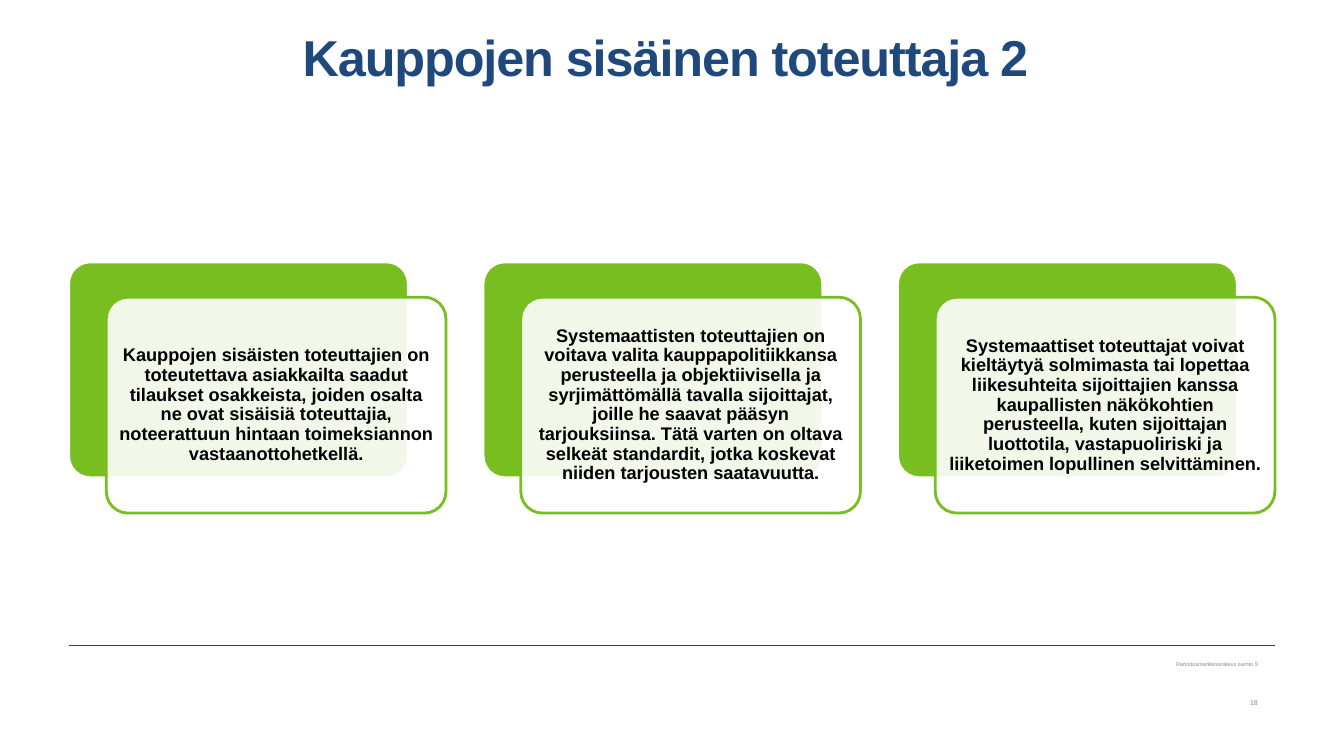
import pptx
import pptx.dml.color
import pptx.enum.shapes
import pptx.enum.text
import pptx.oxml.ns
import pptx.util
from lxml import etree
from pptx.util import Cm

COLORS = {"navy": "1F497D", "green": "78BE20", "white": "FFFFFF",
          "black": "000000", "grey": "8C8C8C"}
ALIGN = pptx.enum.text.PP_ALIGN
ANCHOR = pptx.enum.text.MSO_ANCHOR
LEFT, WIDTH = Cm(1.73), Cm(30.4)

CARDS = [
    "Kauppojen sisäisten toteuttajien on toteutettava asiakkailta saadut tilaukset "
    "osakkeista, joiden osalta ne ovat sisäisiä toteuttajia, noteerattuun hintaan "
    "toimeksiannon vastaanottohetkellä.",
    "Systemaattisten toteuttajien on voitava valita kauppapolitiikkansa perusteella ja "
    "objektiivisella ja syrjimättömällä tavalla sijoittajat, joille he saavat pääsyn "
    "tarjouksiinsa. Tätä varten on oltava selkeät standardit, jotka koskevat niiden "
    "tarjousten saatavuutta.",
    "Systemaattiset toteuttajat voivat kieltäytyä solmimasta tai lopettaa liikesuhteita "
    "sijoittajien kanssa kaupallisten näkökohtien perusteella, kuten sijoittajan "
    "luottotila, vastapuoliriski ja liiketoimen lopullinen selvittäminen.",
]


def rgb(name):
    return pptx.dml.color.RGBColor.from_string(COLORS[name])


def write(sp, text, size, color, bold=False, align=ALIGN.CENTER, anchor=ANCHOR.MIDDLE,
          line_spacing=0.9, spacing=0, insets=(0, 0, 0, 0)):
    """Fill a shape with one paragraph; insets are left, top, right, bottom in cm."""
    tf = sp.text_frame
    tf.word_wrap = True
    tf.vertical_anchor = anchor
    tf.margin_left, tf.margin_top, tf.margin_right, tf.margin_bottom = map(Cm, insets)
    p = tf.paragraphs[0]
    p.alignment = align
    p.line_spacing = line_spacing
    r = p.add_run()
    r.text = text
    r.font.name = "Arial"
    r.font.size = pptx.util.Pt(size)
    r.font.bold = bold
    r.font.color.rgb = rgb(color)
    if spacing:
        r._r.get_or_add_rPr().set("spc", str(round(spacing * 100)))


def add_panel(s, x, y, w, h, fill, line, opacity=100):
    sp = s.shapes.add_shape(pptx.enum.shapes.MSO_SHAPE.ROUNDED_RECTANGLE, x, y, w, h)
    sp.shadow.inherit = False
    sp.adjustments[0] = 0.1
    sp.fill.solid()
    sp.fill.fore_color.rgb = rgb(fill)
    if opacity < 100:
        color = sp.fill._xPr.find(".//" + pptx.oxml.ns.qn("a:srgbClr"))
        etree.SubElement(color, pptx.oxml.ns.qn("a:alpha"), val=str(opacity * 1000))
    sp.line.color.rgb = rgb(line)
    sp.line.width = pptx.util.Pt(2)
    return sp


def add_title(s, x, y, w, h):
    write(s.shapes.add_textbox(x, y, w, h), "Kauppojen sisäinen toteuttaja 2 ", 36, "navy",
          bold=True, anchor=ANCHOR.TOP, line_spacing=0.85, spacing=-0.8)


def add_cards(s, x, y, w, h):
    """Spread the cards over the box, each a green panel with a text panel shifted over it."""
    dx, dy, panel_w = Cm(0.95), Cm(0.89), Cm(8.56)
    panel_h = h - dy
    pitch = (w - dx - panel_w) // (len(CARDS) - 1)
    for i, text in enumerate(CARDS):
        left = x + i * pitch
        add_panel(s, left, y, panel_w, panel_h, "green", "white")
        front = add_panel(s, left + dx, y + dy, panel_w, panel_h, "white", "green", opacity=90)
        write(front, text, 13, "black", bold=True, insets=(0.13,) * 4)


def add_footer(s, x, y, w):
    rule = s.shapes.add_connector(pptx.enum.shapes.MSO_CONNECTOR.STRAIGHT, x, y, x + w, y)
    rule.line.color.rgb = rgb("navy")
    rule.line.width = pptx.util.Pt(1)
    etree.SubElement(rule._element.spPr, pptx.oxml.ns.qn("a:effectLst"))
    note_w = Cm(13.41)
    note_x = x + w - Cm(0.43) - note_w
    for text, size, dy in (("Rahoitusmarkkinaoikeus luento 9", 4, 0.28), ("18", 5, 1.25)):
        write(s.shapes.add_textbox(note_x, y + Cm(dy), note_w, Cm(0.44)), text, size, "grey",
              align=ALIGN.RIGHT, insets=(0.25, 0.13, 0, 0.13))


def main():
    prs = pptx.Presentation()
    prs.slide_width, prs.slide_height = Cm(33.87), Cm(19.05)
    s = prs.slides.add_slide(prs.slide_layouts[6])
    add_footer(s, LEFT, Cm(16.26), WIDTH)
    add_title(s, LEFT, Cm(0.89), WIDTH, Cm(3.33))
    add_cards(s, LEFT, Cm(6.6), WIDTH, Cm(6.33))
    prs.save("out.pptx")


if __name__ == "__main__":
    main()
